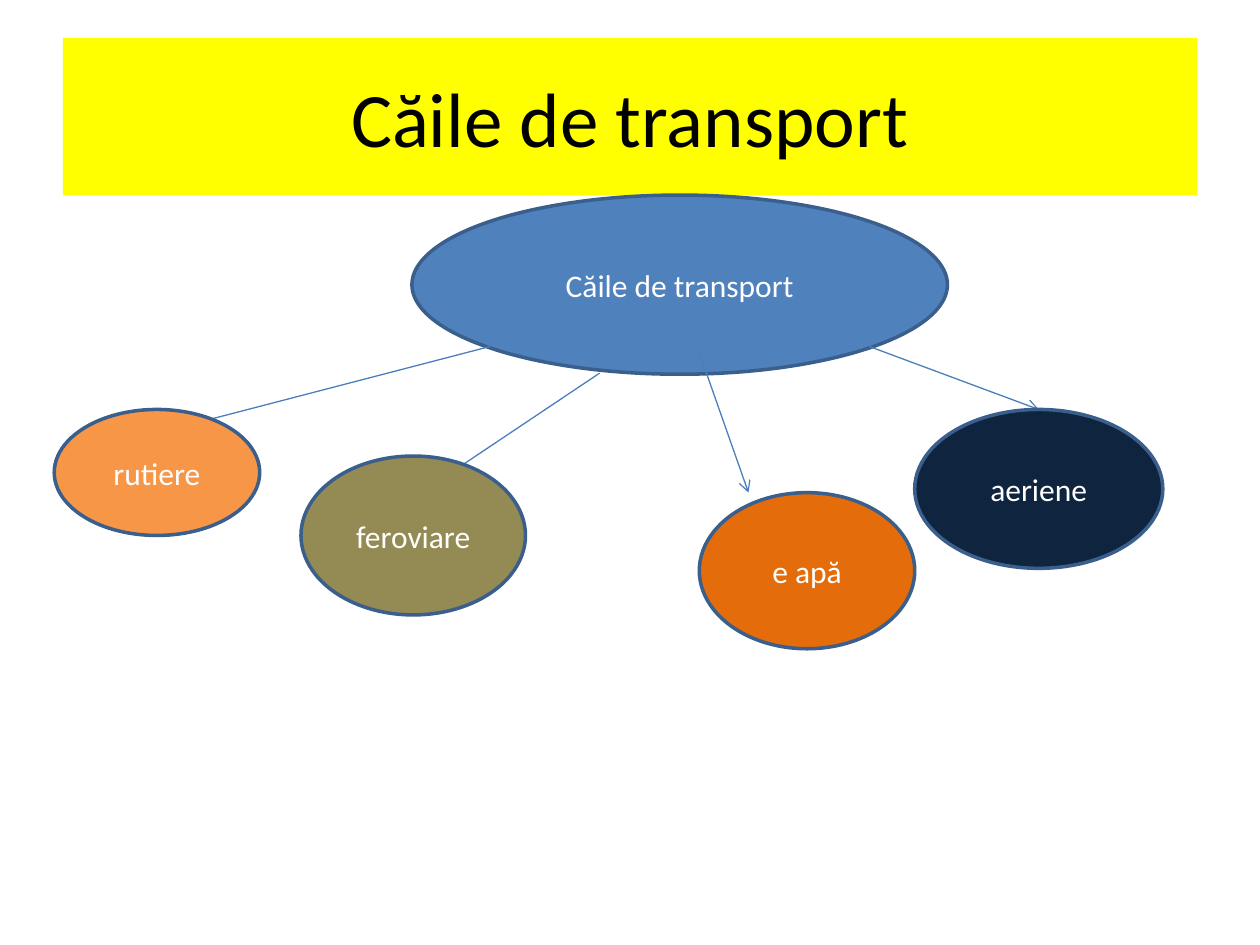
from dataclasses import dataclass

from lxml.etree import SubElement
from pptx import Presentation
from pptx.dml.color import RGBColor
from pptx.enum.shapes import MSO_CONNECTOR as Connector, MSO_SHAPE as Preset
from pptx.enum.text import MSO_ANCHOR as Anchor, PP_ALIGN as Align
from pptx.oxml.ns import qn
from pptx.util import Pt


@dataclass(frozen=True)
class Theme:
    font: str = "Calibri"
    title_size: int = 44
    label_size: int = 18
    title_fill: str = "FFFF00"
    title_text: str = "000000"
    label_text: str = "FFFFFF"
    root: str = "4F81BD"
    road: str = "F79646"
    rail: str = "948A54"
    water: str = "E46C0A"
    air: str = "0F243E"
    outline: str = "3A5F8C"
    arrow: str = "4B7EBC"


theme = Theme()
presentation = Presentation()
presentation.slide_width, presentation.slide_height = Pt(720), Pt(540)
slide = presentation.slides.add_slide(presentation.slide_layouts[6])


def add_label(preset, box, text, fill, size=theme.label_size, color=theme.label_text):
    """Add a filled shape with centred text; box is left, top, width, height."""
    shape = slide.shapes.add_shape(preset, *map(Pt, box))
    shape.shadow.inherit = False
    shape.fill.solid()
    shape.fill.fore_color.rgb = RGBColor.from_string(fill)
    shape.line.color.rgb = RGBColor.from_string(theme.outline)
    shape.line.width = Pt(2)
    frame = shape.text_frame
    frame.text = text
    frame.word_wrap = True
    frame.vertical_anchor = Anchor.MIDDLE
    paragraph = frame.paragraphs[0]
    paragraph.alignment = Align.CENTER
    font = paragraph.runs[0].font
    font.name, font.size = theme.font, Pt(size)
    font.color.rgb = RGBColor.from_string(color)
    return shape


def add_arrow(start, end):
    arrow = slide.shapes.add_connector(Connector.STRAIGHT, *map(Pt, start + end))
    arrow.line.color.rgb = RGBColor.from_string(theme.arrow)
    arrow.line.width = Pt(0.75)
    SubElement(arrow.line._get_or_add_ln(), qn("a:tailEnd"), type="arrow")
    SubElement(arrow._element.spPr, qn("a:effectLst"))
    return arrow


title = add_label(Preset.RECTANGLE, (36, 21.6, 648, 90), "Căile de transport",
                  theme.title_fill, theme.title_size, theme.title_text)
title.line.fill.background()

add_label(Preset.OVAL, (235.4, 111.5, 306, 102.4), "Căile de transport", theme.root)

# Each branch: text, fill, ellipse box, arrow start, arrow end
branches = [
    ("rutiere", theme.road, (31, 234, 117.4, 72), (280, 198), (110.9, 242)),
    ("feroviare", theme.rail, (172, 260.6, 128.3, 90.8), (342.7, 213.2), (257.8, 270)),
    ("e apă", theme.water, (399.6, 281.5, 123.1, 89.2), (399.6, 201.6), (427.7, 281.5)),
    ("aeriene", theme.air, (522.7, 234, 141.8, 90.8), (496.8, 198), (592.6, 234)),
]
for text, fill, box, start, end in branches:
    # The arrow comes first so that the ellipse covers its tip
    arrow = add_arrow(start, end)
    ellipse = add_label(Preset.OVAL, box, text, fill)

# The last arrow meets the top of its ellipse
arrow.end_connect(ellipse, 0)

presentation.save("out.pptx")
